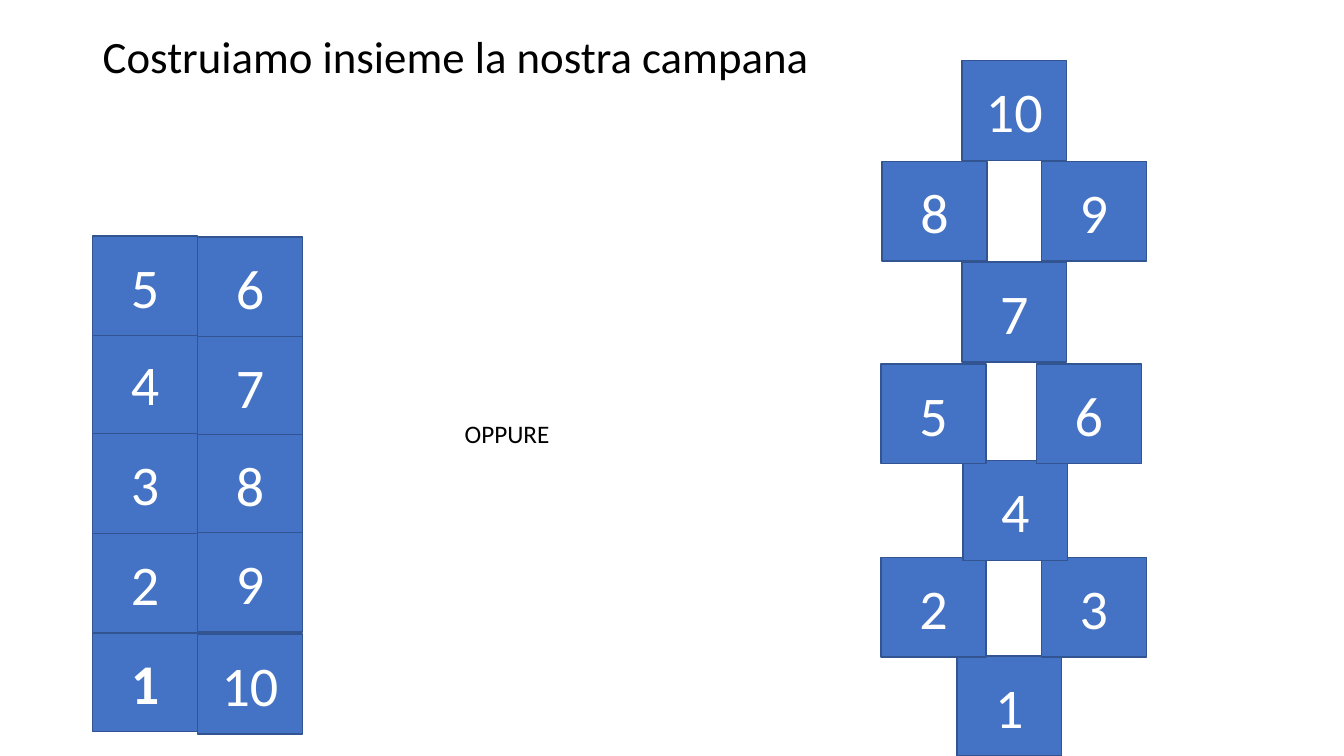
"""Build the slide that shows two ways of laying out a hopscotch court."""
from pptx import Presentation
from pptx import util as u
from pptx.dml import color
from pptx.enum import shapes, text

TILE_WIDTH, TILE_HEIGHT = 1.04, 0.99
LEFT_COLUMN = [6.27, 5.29, 4.3, 3.31, 2.34]
RIGHT_COLUMN = [2.35, 3.34, 4.31, 5.28, 6.29]
TOWER = [
    (6.51, [(1, 9.49)]),
    (5.53, [(2, 8.74), (3, 10.33)]),
    (4.57, [(4, 9.55)]),
    (3.61, [(5, 8.74), (6, 10.28)]),
    (2.6, [(7, 9.54)]),
    (1.6, [(8, 8.75), (9, 10.33)]),
    (0.6, [(10, 9.54)]),
]


def rgb(value):
    """Turn a hex string into a colour."""
    return color.RGBColor.from_string(value)


def write(frame, words, size=18, ink="000000", bold=False, align=text.PP_ALIGN.LEFT,
          anchor=text.MSO_ANCHOR.TOP, spacing=1.0):
    """Put one formatted paragraph into a text frame."""
    frame.word_wrap = True
    frame.vertical_anchor = anchor
    para = frame.paragraphs[0]
    para.alignment = align
    para.line_spacing = spacing
    span = para.add_run()
    span.text = words
    span.font.name = "Calibri"
    span.font.size = u.Pt(size)
    span.font.bold = bold
    span.font.color.rgb = rgb(ink)


class Court:
    """Hold the tile style and the current page."""

    fill = "4472C4"
    line = "325491"

    def __init__(self, page):
        """Keep the page to draw on."""
        self.page = page

    def label(self, words, left, top, width, height, **style):
        """Add a text box."""
        box = self.page.shapes.add_textbox(
            u.Inches(left), u.Inches(top), u.Inches(width), u.Inches(height))
        write(box.text_frame, words, **style)

    def tile(self, number, left, top, bold=False):
        """Add a numbered tile."""
        box = self.page.shapes.add_shape(
            shapes.MSO_SHAPE.RECTANGLE, u.Inches(left), u.Inches(top),
            u.Inches(TILE_WIDTH), u.Inches(TILE_HEIGHT))
        box.shadow.inherit = False
        box.fill.solid()
        box.fill.fore_color.rgb = rgb(self.fill)
        box.line.color.rgb = rgb(self.line)
        box.line.width = u.Pt(1)
        write(box.text_frame, str(number), size=40, ink="FFFFFF", bold=bold,
              align=text.PP_ALIGN.CENTER, anchor=text.MSO_ANCHOR.MIDDLE)


def main():
    """Draw both courts and save the deck."""
    deck = Presentation()
    deck.slide_width, deck.slide_height = u.Inches(13.33), u.Inches(7.5)
    court = Court(deck.slides.add_slide(deck.slide_layouts[6]))

    court.label("Costruiamo insieme la nostra campana", 0.92, 0.4, 9.01, 0.37,
                size=32, anchor=text.MSO_ANCHOR.MIDDLE, spacing=0.9)
    for number, top in enumerate(LEFT_COLUMN, 1):
        court.tile(number, 0.92, top, bold=number == 1)
    for number, top in enumerate(RIGHT_COLUMN, 6):
        court.tile(number, 0.92 + TILE_WIDTH, top)
    court.label("OPPURE", 4.51, 4.1, 1.8, 0.4)
    for top, row in TOWER:
        for number, left in row:
            court.tile(number, left, top)

    deck.save("out.pptx")


if __name__ == "__main__":
    main()
